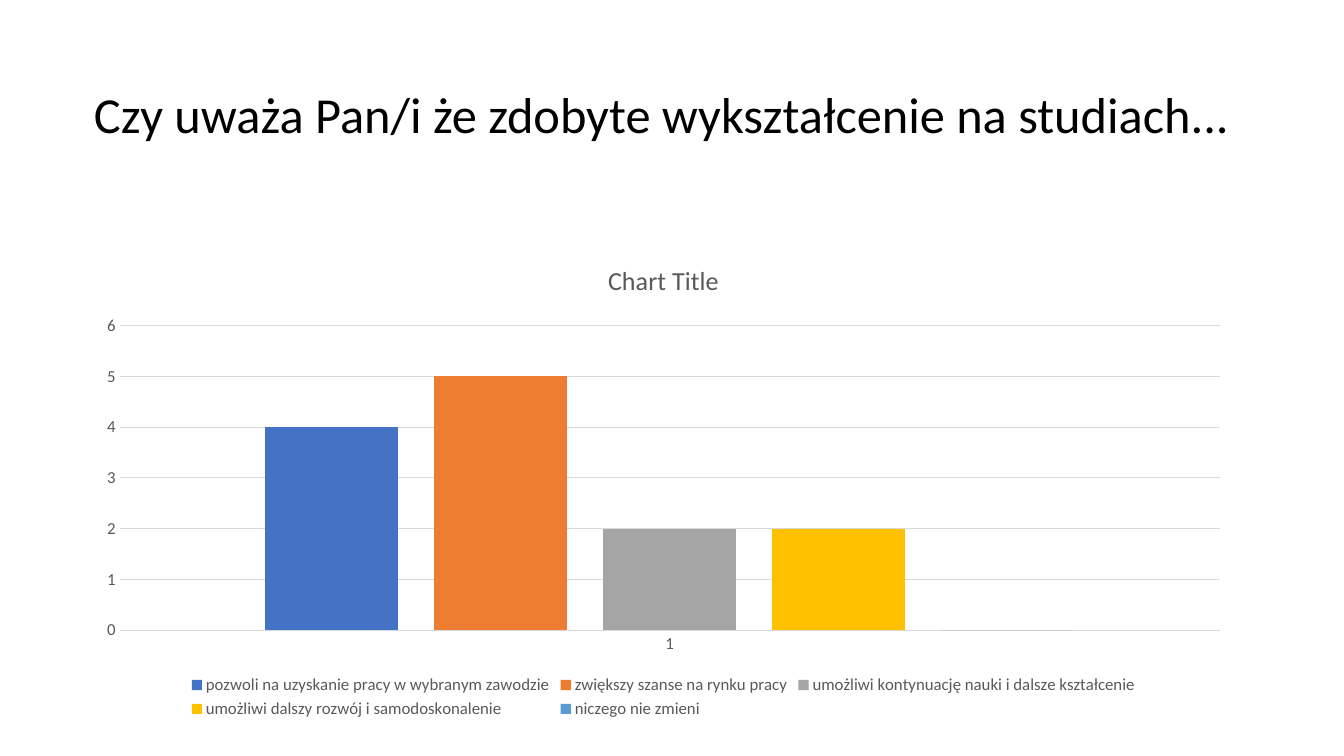
import pptx
import pptx.chart.data
import pptx.dml.color
import pptx.enum.chart
import pptx.enum.text
import pptx.util

FONT = "Calibri"
GREY_TEXT = "595959"
GREY_LINE = "D9D9D9"
ANSWERS = [
    ("pozwoli na uzyskanie pracy w wybranym zawodzie", 4, "4472C4"),
    ("zwiększy szanse na rynku pracy", 5, "ED7D31"),
    ("umożliwi kontynuację nauki i dalsze kształcenie", 2, "A5A5A5"),
    ("umożliwi dalszy rozwój i samodoskonalenie", 2, "FFC000"),
    ("niczego nie zmieni", 0, "5B9BD5"),
]


def px(*lengths):
    """Turn pixels, 100.8 to the inch, into EMU."""
    return [pptx.util.Emu(round(length * 914400 / 100.8)) for length in lengths]


def style(font, size, color):
    font.name = FONT
    font.size = pptx.util.Pt(size)
    font.bold = False
    font.color.rgb = pptx.dml.color.RGBColor.from_string(color)


deck = pptx.Presentation()
deck.slide_width, deck.slide_height = px(1344, 756)
page = deck.slides.add_slide(deck.slide_layouts[6])

# Question
question = page.shapes.add_textbox(*px(84, 34, 1177, 167)).text_frame
question.word_wrap = True
question.vertical_anchor = pptx.enum.text.MSO_ANCHOR.MIDDLE
para = question.paragraphs[0]
para.line_spacing = 0.9
span = para.add_run()
span.text = "Czy uważa Pan/i że zdobyte wykształcenie na studiach..."
style(span.font, 36, "000000")

# Answers
answers = pptx.chart.data.CategoryChartData()
answers.categories = ["1"]
for name, count, color in ANSWERS:
    answers.add_series(name, [count])
chart = page.shapes.add_chart(
    pptx.enum.chart.XL_CHART_TYPE.COLUMN_CLUSTERED, *px(84, 243, 1159, 480), answers
).chart
style(chart.font, 10, "000000")

chart.has_title = True
span = chart.chart_title.text_frame.paragraphs[0].add_run()
span.text = "Chart Title"
style(span.font, 18.6, GREY_TEXT)
chart.chart_title.include_in_layout = False

plot = chart.plots[0]
plot.vary_by_categories = False
plot.gap_width = 219
plot.overlap = -27
for series, (name, count, color) in zip(plot.series, ANSWERS):
    series.format.fill.solid()
    series.format.fill.fore_color.rgb = pptx.dml.color.RGBColor.from_string(color)
    series.invert_if_negative = False

for axis in (chart.category_axis, chart.value_axis):
    axis.major_tick_mark = pptx.enum.chart.XL_TICK_MARK.NONE
    axis.minor_tick_mark = pptx.enum.chart.XL_TICK_MARK.NONE
    style(axis.tick_labels.font, 12, GREY_TEXT)

chart.value_axis.minimum_scale = 0
chart.value_axis.maximum_scale = 6
chart.value_axis.major_unit = 1
chart.value_axis.has_major_gridlines = True
chart.value_axis.format.line.fill.background()
for line in (chart.category_axis.format.line, chart.value_axis.major_gridlines.format.line):
    line.width = pptx.util.Pt(0.75)
    line.color.rgb = pptx.dml.color.RGBColor.from_string(GREY_LINE)

chart.has_legend = True
chart.legend.position = pptx.enum.chart.XL_LEGEND_POSITION.BOTTOM
chart.legend.include_in_layout = False
style(chart.legend.font, 12, GREY_TEXT)

deck.save("out.pptx")
